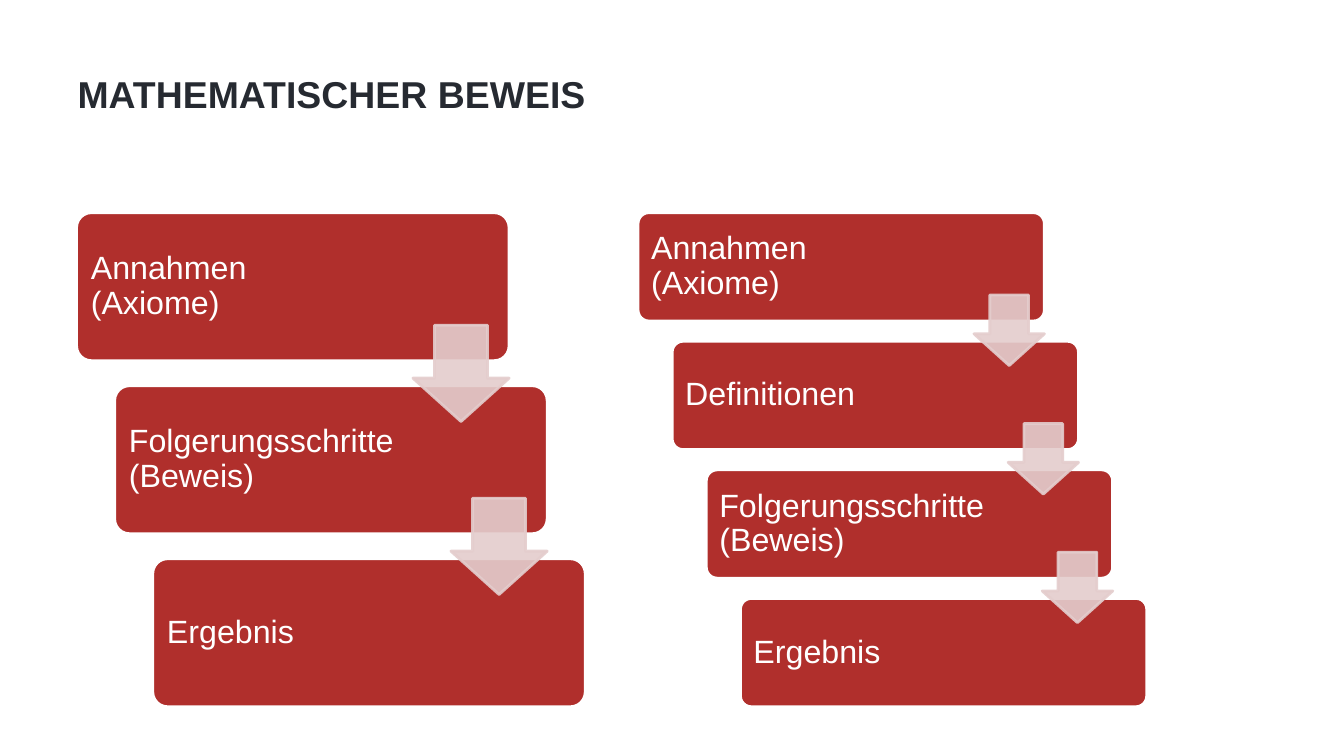
from lxml import etree
from pptx import Presentation
from pptx.dml.color import RGBColor
from pptx.enum.shapes import MSO_SHAPE
from pptx.enum.text import MSO_ANCHOR, PP_ALIGN
from pptx.oxml.ns import qn
from pptx.util import Cm, Pt

TITLE_ONLY = 5
ROUND_RECT = MSO_SHAPE.ROUNDED_RECTANGLE
DOWN_ARROW = MSO_SHAPE.DOWN_ARROW
MIDDLE = MSO_ANCHOR.MIDDLE
LEFT = PP_ALIGN.LEFT

FONT = "Arial"
RED, PINK, WHITE, DARK = "B02F2C", "E4CDCD", "FFFFFF", "262A31"
TEXT_AREA = 7.3  # cm, label width including its left inset
STAIR_TOP = 5.36  # cm


def set_color(fill, color, alpha=None):
    """Make a fill solid; alpha is the opacity in percent."""
    fill.solid()
    fill.fore_color.rgb = RGBColor.from_string(color)
    if alpha is not None:
        for clr in fill._xPr.iter(qn("a:srgbClr")):
            etree.SubElement(clr, qn("a:alpha"), val=str(alpha * 1000))


def style_text(p, size, color, bold=False):
    p.alignment = LEFT
    p.font.name = FONT
    p.font.size = Pt(size)
    p.font.bold = bold
    p.font.color.rgb = RGBColor.from_string(color)


def add_title(s, text):
    sp = s.shapes.title
    sp.left, sp.top, sp.width, sp.height = Cm(1.7), Cm(0.76), Cm(30.48), Cm(3.18)
    tf = sp.text_frame
    tf.text = text
    tf.vertical_anchor = MIDDLE
    style_text(tf.paragraphs[0], 26.7, DARK, bold=True)


def add_preset(shapes, kind, x, y, w, h, adjustments):
    sp = shapes.add_shape(kind, Cm(x), Cm(y), Cm(w), Cm(h))
    sp.shadow.inherit = False
    sp.line.width = Pt(2)
    for i, value in enumerate(adjustments):
        sp.adjustments[i] = value
    return sp


def add_step(shapes, text, x, y, w, h):
    sp = add_preset(shapes, ROUND_RECT, x, y, w, h, [0.1])
    set_color(sp.fill, RED)
    set_color(sp.line.fill, WHITE)
    tf = sp.text_frame
    tf.text = text
    tf.word_wrap = True
    tf.vertical_anchor = MIDDLE
    tf.margin_left = tf.margin_top = tf.margin_bottom = Cm(0.25)
    tf.margin_right = Cm(w - TEXT_AREA)
    p = tf.paragraphs[0]
    p.line_spacing = 0.9
    style_text(p, 23, WHITE)


def add_arrow(shapes, x, y, size):
    sp = add_preset(shapes, DOWN_ARROW, x, y, size, size, [0.55, 0.45])
    set_color(sp.fill, PINK, 90)
    set_color(sp.line.fill, PINK, 90)


def add_staircase(s, labels, left, w, h, dx, dy):
    """Add descending steps, each joined to the next by an arrow at its right edge."""
    shapes = s.shapes.add_group_shape().shapes
    corners = [(left + i * dx, STAIR_TOP + i * dy) for i in range(len(labels))]
    for label, (x, y) in zip(labels, corners):
        add_step(shapes, label, x, y, w, h)
    size = 0.65 * h
    for x, y in corners[:-1]:
        add_arrow(shapes, x + w - size, y + 0.76 * h, size)


def main():
    prs = Presentation()
    prs.slide_width, prs.slide_height = Cm(33.87), Cm(19.05)
    s = prs.slides.add_slide(prs.slide_layouts[TITLE_ONLY])
    add_title(s, "MATHEMATISCHER BEWEIS")
    axioms, proof, result = "Annahmen (Axiome)", "Folgerungsschritte (Beweis)", "Ergebnis"
    add_staircase(s, [axioms, proof, result], 1.93, 10.9, 3.73, 0.96, 4.36)
    add_staircase(s, [axioms, "Definitionen", proof, result], 16.08, 10.24, 2.73, 0.86, 3.24)
    prs.save("out.pptx")


if __name__ == "__main__":
    main()
